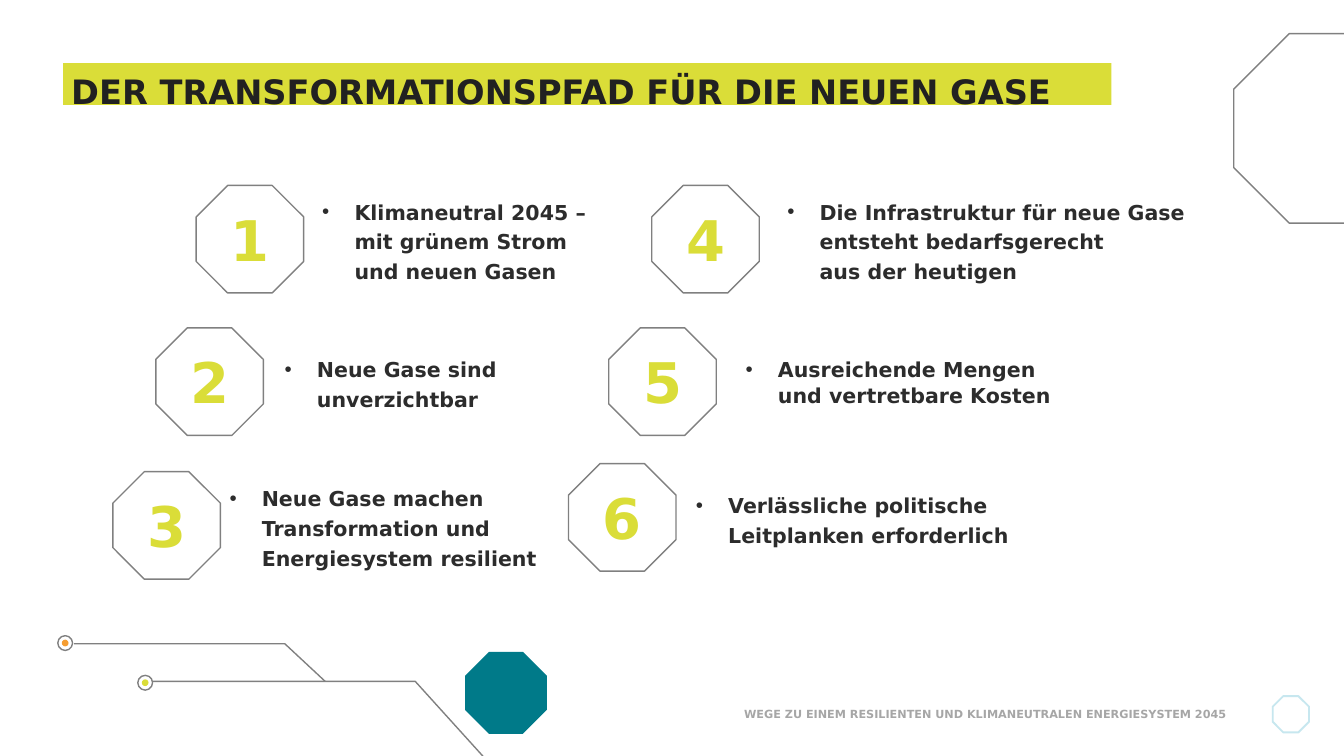
from dataclasses import dataclass

from lxml import etree
from pptx import Presentation
from pptx.dml.color import RGBColor
from pptx.enum.shapes import MSO_SHAPE
from pptx.enum.text import MSO_ANCHOR, MSO_AUTO_SIZE, PP_ALIGN
from pptx.oxml.ns import qn
from pptx.util import Inches, Pt

OCTAGON, OVAL, RECTANGLE = MSO_SHAPE.OCTAGON, MSO_SHAPE.OVAL, MSO_SHAPE.RECTANGLE
TOP, MIDDLE = MSO_ANCHOR.TOP, MSO_ANCHOR.MIDDLE
LEFT, CENTER, RIGHT = PP_ALIGN.LEFT, PP_ALIGN.CENTER, PP_ALIGN.RIGHT

FONT, BULLET_FONT = "DejaVu Sans", "Arial"
LIME, TEAL, ORANGE, PALE_BLUE = "DADD38", "007A89", "F59D31", "C7E7EF"
WHITE, GREY, LIGHT_GREY = "FFFFFF", "808080", "A6A6A6"
TITLE_INK, BODY_INK = "212121", "2C2C2C"

# The slide is a grid of square cells, 100 columns wide, in the ratio 16:9.
CELL = Inches(0.1)
COLUMNS, ROWS = 100, 56.25
BADGE = 8


@dataclass(frozen=True)
class Area:
    column: float
    row: float
    columns: float
    rows: float

    def emu(self) -> tuple[int, ...]:
        return tuple(cells(value) for value in (self.column, self.row, self.columns, self.rows))


@dataclass(frozen=True)
class Thesis:
    number: int
    column: float
    row: float
    text_column: float
    text_columns: float
    text: str
    spacing: float = Pt(16)


@dataclass(frozen=True)
class Trace:
    """A circuit line that starts at a coloured dot."""
    dot: tuple[float, float]
    color: str
    points: tuple[tuple[float, float], ...]


THESES = (
    Thesis(1, 14.6, 13.8, 21.6, 29.4, "Klimaneutral 2045 –\vmit grünem Strom\vund neuen Gasen"),
    Thesis(2, 11.6, 24.4, 18.8, 28.6, "Neue Gase sind unverzichtbar"),
    Thesis(3, 8.4, 35.1, 14.7, 28.6, "Neue Gase machen Transformation und Energiesystem resilient"),
    Thesis(4, 48.5, 13.8, 56.2, 33.2,
           "Die Infrastruktur für neue Gase entsteht bedarfsgerecht\vaus der heutigen"),
    Thesis(5, 45.3, 24.4, 53.1, 28.6, "Ausreichende Mengen und vertretbare Kosten", 1.07),
    Thesis(6, 42.3, 34.5, 49.4, 28.6, "Verlässliche politische Leitplanken erforderlich"),
)

TRACES = (
    Trace((10.8, 50.8), LIME, ((40.4, 61.2), (30.9, 50.7), (11.3, 50.7))),
    Trace((4.85, 47.85), ORANGE, ((24.2, 50.7), (21.2, 47.9), (5.5, 47.9))),
)


def cells(count: float) -> int:
    return round(count * CELL)


def rgb(color: str) -> RGBColor:
    return RGBColor.from_string(color)


def paint(shape, fill: str | None, line: str | None, width: float) -> None:
    shape.shadow.inherit = False
    if fill:
        shape.fill.solid()
        shape.fill.fore_color.rgb = rgb(fill)
    else:
        shape.fill.background()
    if line:
        shape.line.color.rgb = rgb(line)
        shape.line.width = Pt(width)
    else:
        shape.line.fill.background()


def add_figure(slide, kind, area: Area, fill: str | None = None,
               line: str | None = None, width: float = 0.75) -> None:
    paint(slide.shapes.add_shape(kind, *area.emu()), fill, line, width)


def add_bullet(para) -> None:
    properties = para._p.get_or_add_pPr()
    properties.set("marL", str(cells(3.8)))
    properties.set("indent", str(cells(-2.4)))
    etree.SubElement(properties, qn("a:buFont")).set("typeface", BULLET_FONT)
    etree.SubElement(properties, qn("a:buChar")).set("char", "•")


def write(box, text: str, *, size: float, color: str, align=LEFT, anchor=MIDDLE,
          spacing: float | None = None, bullet: bool = False) -> None:
    frame = box.text_frame
    frame.word_wrap = True
    frame.auto_size = MSO_AUTO_SIZE.NONE
    frame.vertical_anchor = anchor
    frame.text = text
    para = frame.paragraphs[0]
    para.alignment = align
    if spacing is not None:
        para.line_spacing = spacing
    if bullet:
        add_bullet(para)
    for span in para.runs:
        span.font.name = FONT
        span.font.size = Pt(size)
        span.font.bold = True
        span.font.color.rgb = rgb(color)


def add_text(slide, area: Area, text: str, **style) -> None:
    write(slide.shapes.add_textbox(*area.emu()), text, **style)


def add_thesis(slide, thesis: Thesis) -> None:
    badge = Area(thesis.column, thesis.row, BADGE, BADGE)
    label = Area(thesis.column, thesis.row + 1, BADGE, 6.3)
    body = Area(thesis.text_column, thesis.row, thesis.text_columns, BADGE)
    add_text(slide, label, str(thesis.number), size=30, color=LIME, align=CENTER, anchor=TOP)
    add_figure(slide, OCTAGON, badge, line=GREY)
    add_text(slide, body, thesis.text, size=11, color=BODY_INK,
             spacing=thesis.spacing, bullet=True)


def add_dot(slide, center: tuple[float, float], diameter: float, **colors) -> None:
    column, row = (value - diameter / 2 for value in center)
    add_figure(slide, OVAL, Area(column, row, diameter, diameter), **colors)


def add_trace(slide, trace: Trace) -> None:
    start, *rest = [(cells(column), cells(row)) for column, row in trace.points]
    builder = slide.shapes.build_freeform(*start)
    builder.add_line_segments(rest, close=False)
    paint(builder.convert_to_shape(), None, GREY, 0.75)
    add_dot(slide, trace.dot, 1.1, fill=WHITE, line=GREY)
    add_dot(slide, trace.dot, 0.5, fill=trace.color)


def add_heading(slide) -> None:
    add_figure(slide, RECTANGLE, Area(4.7, 4.7, 78, 3.1), fill=LIME)
    title = slide.shapes.title
    title.left, title.top, title.width, title.height = Area(4.3, 3.9, 91.4, 6.1).emu()
    write(title, "DER TRANSFORMATIONSPFAD FÜR DIE NEUEN GASE", size=18,
          color=TITLE_INK, anchor=TOP, spacing=Pt(28))
    slide.shapes._spTree.append(title._element)  # the title lies above its bar


def add_footer(slide) -> None:
    add_figure(slide, OCTAGON, Area(94.7, 51.8, 2.7, 2.7), fill=WHITE, line=PALE_BLUE, width=1)
    add_text(slide, Area(34.2, 51.6, 58, 3),
             "WEGE ZU EINEM RESILIENTEN UND KLIMANEUTRALEN ENERGIESYSTEM 2045",
             size=6, color=LIGHT_GREY, align=RIGHT)


def main() -> None:
    deck = Presentation()
    deck.slide_width, deck.slide_height = cells(COLUMNS), cells(ROWS)
    page = deck.slides.add_slide(deck.slide_layouts.get_by_name("Title Only"))
    add_footer(page)
    add_heading(page)
    for thesis in THESES:
        add_thesis(page, thesis)
    add_figure(page, OCTAGON, Area(91.8, 2.5, 14.1, 14.1), line=GREY)
    add_figure(page, OCTAGON, Area(34.6, 48.5, 6.1, 6.1), fill=TEAL)
    for trace in TRACES:
        add_trace(page, trace)
    deck.save("out.pptx")


if __name__ == "__main__":
    main()
